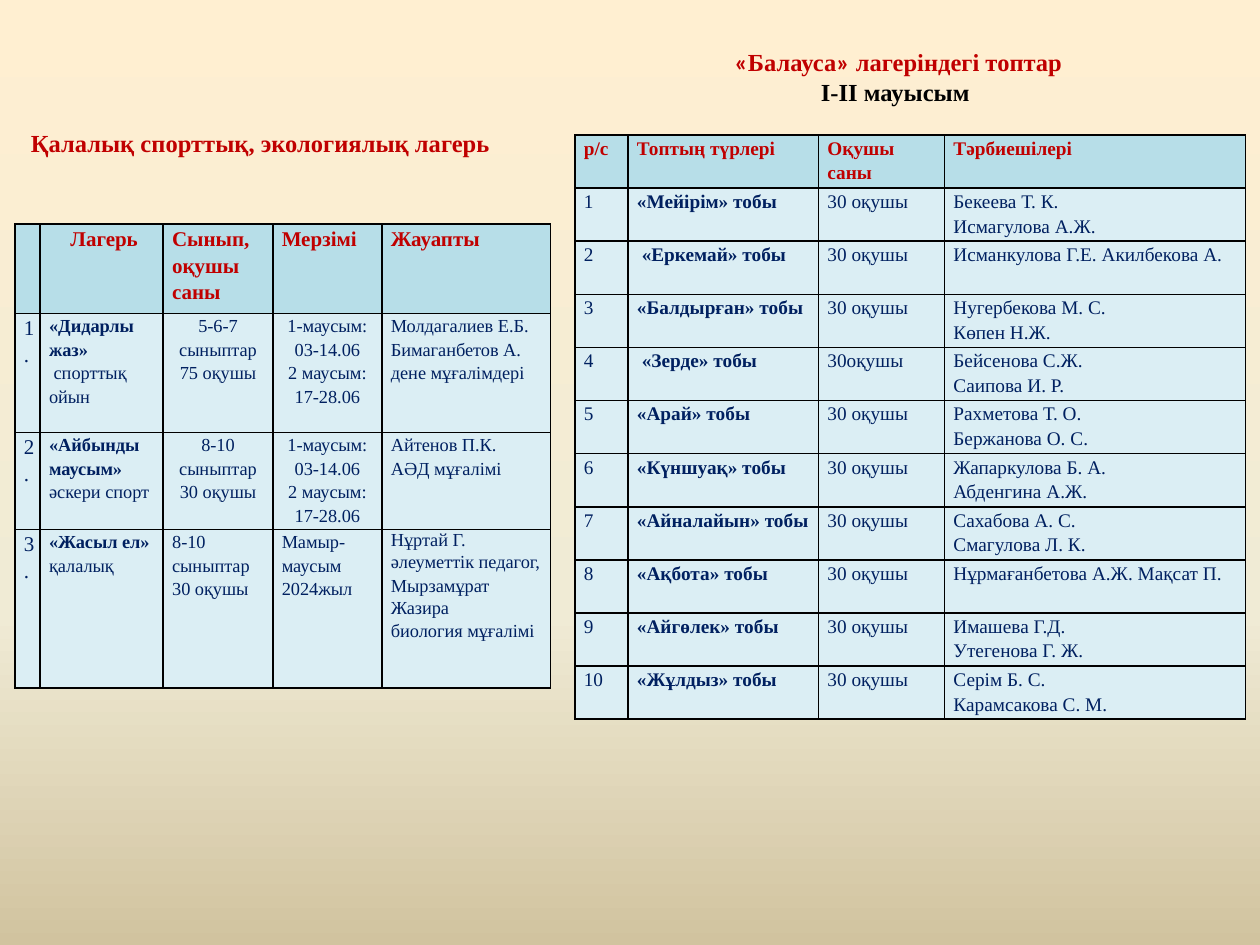
"""Build the slide with the camp table and the group table."""
from copy import deepcopy

from lxml import etree
from pptx import Presentation, util as u
from pptx.dml.color import RGBColor
from pptx.enum import text as t
from pptx.oxml.ns import qn

THEME = {
    "font": "Times New Roman", "quote": "Calibri",
    "red": "C00000", "navy": "002060", "black": "000000",
    "head": "B7DEE8", "body": "DBEEF4",
    "back": [(0, "FFEFD1"), (0.65, "F0EBD5"), (1, "D1C39F")],
    "title": 14, "camp": 12, "text": 10.5, "group": 11,
}

CAMP_NAME = "Қалалық спорттық, экологиялық лагерь"
GROUP_NAME = [" |«|Балауса|»| лагеріндегі топтар", "І-ІІ мауысым"]

DATES = "1-маусым: 03-14.06\n2 маусым: 17-28.06"
CAMPS = [
    ["", "Лагерь", "Сынып, оқушы саны", "Мерзімі", "Жауапты"],
    ["1.", "«Дидарлы жаз»\n спорттық ойын", "5-6-7 сыныптар\n75 оқушы", DATES,
     "Молдагалиев Е.Б.\nБимаганбетов А.\nдене мұғалімдері"],
    ["2.", "«Айбынды маусым»\nәскери спорт", "8-10 сыныптар\n30 оқушы", DATES,
     "Айтенов П.К.\nАӘД мұғалімі"],
    ["3.", "«Жасыл ел» |қалалық", "8-10 сыныптар\n30 оқушы",
     "Мамыр-маусым 2024жыл",
     "Нұртай Г. әлеуметтік педагог,\nМырзамұрат Жазира\nбиология мұғалімі"],
]
GROUPS = [
    ("«Мейірім» тобы", "30 оқушы", "Бекеева Т. К.\nИсмагулова А.Ж."),
    (" «Еркемай» тобы", "30 оқушы", "Исманкулова Г.Е. Акилбекова А."),
    ("«Балдырған» тобы", "30 оқушы", "Нугербекова М. С.\nКөпен Н.Ж."),
    (" «Зерде» тобы", "30оқушы", "Бейсенова С.Ж.\nСаипова И. Р."),
    ("«Арай» тобы", "30 оқушы", "Рахметова Т. О.\nБержанова О. С."),
    ("«Күншуақ» тобы", "30 оқушы", "Жапаркулова Б. А.\nАбденгина А.Ж."),
    ("«Айналайын» тобы", "30 оқушы", "Сахабова А. С.\nСмагулова Л. К."),
    ("«Ақбота» тобы", "30 оқушы", "Нұрмағанбетова А.Ж. Мақсат П."),
    ("«Айгөлек» тобы", "30 оқушы", "Имашева Г.Д.\nУтегенова Г. Ж."),
    ("«Жұлдыз» тобы", "30 оқушы", "Серім Б. С.\nКарамсакова С. М."),
]
GROUP_ROWS = [["р/с", "Топтың түрлері", "Оқушы саны", "Тәрбиешілері"]] + [
    [str(n), *group] for n, group in enumerate(GROUPS, 1)]


def tint(name):
    return RGBColor.from_string(THEME.get(name, name))


def style(run, size, tone, bold):
    font = run.font
    font.name = THEME["quote" if run.text in "«»" else "font"]
    font.size, font.bold = u.Pt(size), bold
    font.color.rgb = tint(tone)


def write(frame, lines):
    frame.text = "\n".join(line.split("|")[0] for line in lines)
    for para, line in zip(frame.paragraphs, lines):
        for part in line.split("|")[1:]:
            para.add_run().text = part
    return frame.paragraphs


def border(cell):
    props = cell._tc.get_or_add_tcPr()
    for spot, side in enumerate(("lnL", "lnR", "lnT", "lnB")):
        line = etree.Element(qn("a:" + side), w=str(u.Pt(1)))
        fill = etree.SubElement(line, qn("a:solidFill"))
        etree.SubElement(fill, qn("a:srgbClr"), val=THEME["black"])
        props.insert(spot, line)


def fill_cell(cell, words, head, lead, size):
    cell.margin_left = cell.margin_right = u.Cm(0.18)
    cell.margin_top = cell.margin_bottom = 0
    cell.fill.solid()
    cell.fill.fore_color.rgb = tint("head" if head else "body")
    border(cell)
    for i, para in enumerate(write(cell.text_frame, words.split("\n"))):
        para.line_spacing = 1.15
        for j, run in enumerate(para.runs):
            style(run, size, "red" if head else "navy",
                  head or (lead and i == j == 0))


def add_grid(slide, data, left, top, wides, highs, sizes):
    grid = slide.shapes.add_table(
        len(data), len(wides), u.Cm(left), u.Cm(top),
        u.Cm(sum(wides)), u.Cm(sum(highs))).table
    for col, wide in zip(grid.columns, wides):
        col.width = u.Cm(wide)
    for r, (row, high) in enumerate(zip(data, highs)):
        grid.rows[r].height = u.Cm(high)
        for c, words in enumerate(row):
            size = sizes[0] if r == 0 or c == 0 else sizes[1]
            fill_cell(grid.cell(r, c), words, r == 0, c == 1, size)
    return grid


def add_title(slide, lines, tones, place, anchor):
    frame = slide.shapes.add_textbox(*map(u.Cm, place)).text_frame
    frame.word_wrap = True
    frame.vertical_anchor = anchor
    for para, tone in zip(write(frame, lines), tones):
        para.alignment = t.PP_ALIGN.CENTER
        for run in para.runs:
            style(run, THEME["title"], tone, True)


def paint_back(slide):
    fill = slide.background.fill
    fill.gradient()
    fill.gradient_angle = 270
    stops = slide._element.find(".//" + qn("a:gsLst"))
    stops.append(deepcopy(stops[-1]))
    for stop, (spot, tone) in zip(fill.gradient_stops, THEME["back"]):
        stop.position = spot
        stop.color.rgb = tint(tone)


def main():
    deck = Presentation()
    deck.slide_width, deck.slide_height = u.Cm(25.4), u.Cm(19.05)
    slide = deck.slides.add_slide(deck.slide_layouts[6])
    paint_back(slide)

    camps = add_grid(slide, CAMPS, 0.3, 4.52, [0.51, 2.48, 2.21, 2.2, 3.4],
                     [1.8, 2.4, 1.95, 3.2], (THEME["camp"], THEME["text"]))
    camps.cell(0, 1).text_frame.paragraphs[0]._p.get_or_add_pPr().set(
        "marL", str(u.Cm(0.43)))
    for r in (1, 2):
        for c in (2, 3):
            for para in camps.cell(r, c).text_frame.paragraphs:
                para.alignment = t.PP_ALIGN.CENTER
    for para in camps.cell(3, 4).text_frame.paragraphs[:2]:
        para.line_spacing, para.space_before = 1.05, u.Pt(2)

    add_title(slide, [CAMP_NAME], ["red"], (0, 2.46, 10.5, 1.2),
              t.MSO_ANCHOR.TOP)
    add_grid(slide, GROUP_ROWS, 11.59, 2.72, [1.07, 3.84, 2.54, 6.07],
             [1.07] * len(GROUP_ROWS), (THEME["group"],) * 2)
    add_title(slide, GROUP_NAME, ["red", "black"], (13.9, 0.82, 8.3, 1.45),
              t.MSO_ANCHOR.MIDDLE)
    deck.save("out.pptx")


if __name__ == "__main__":
    main()
